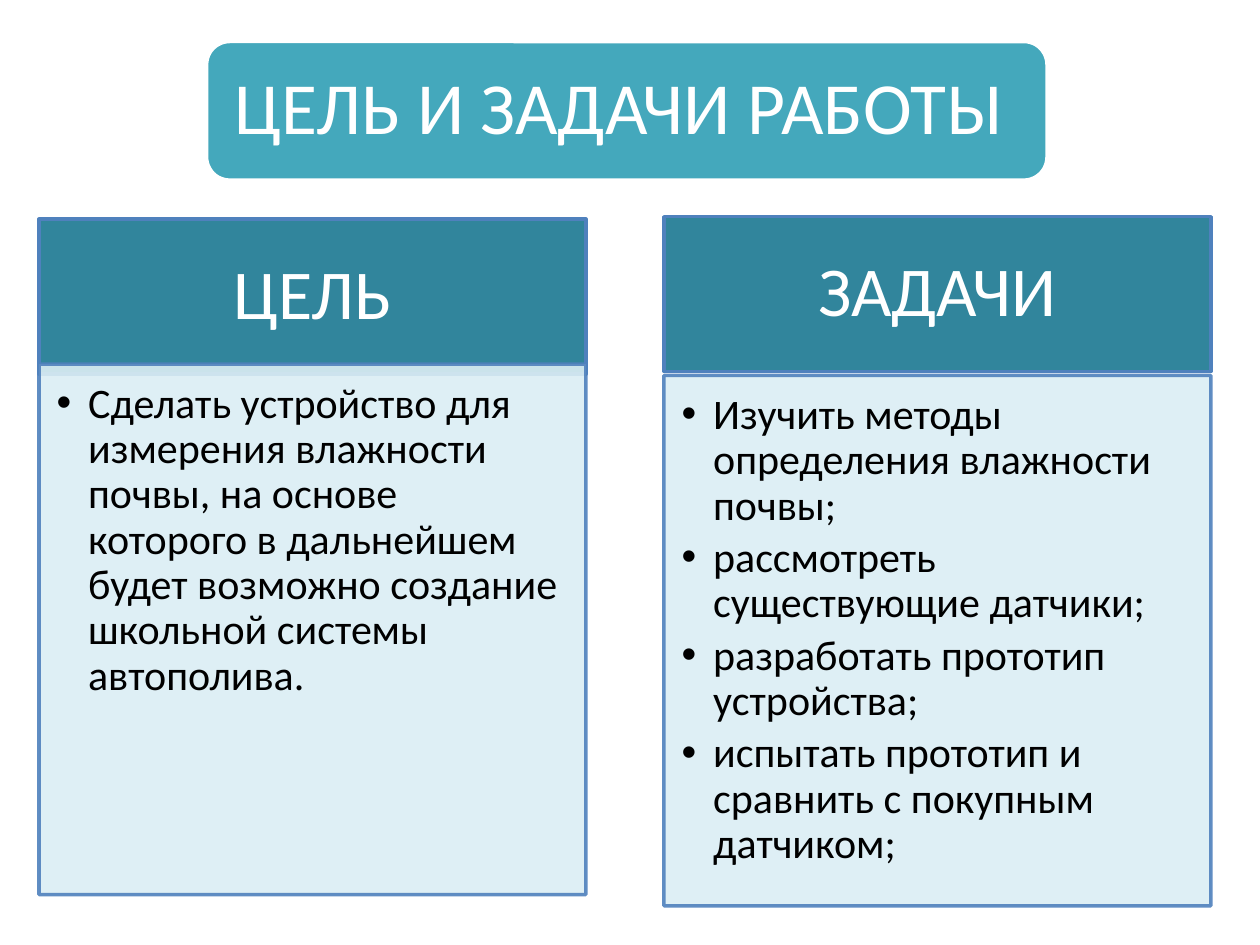
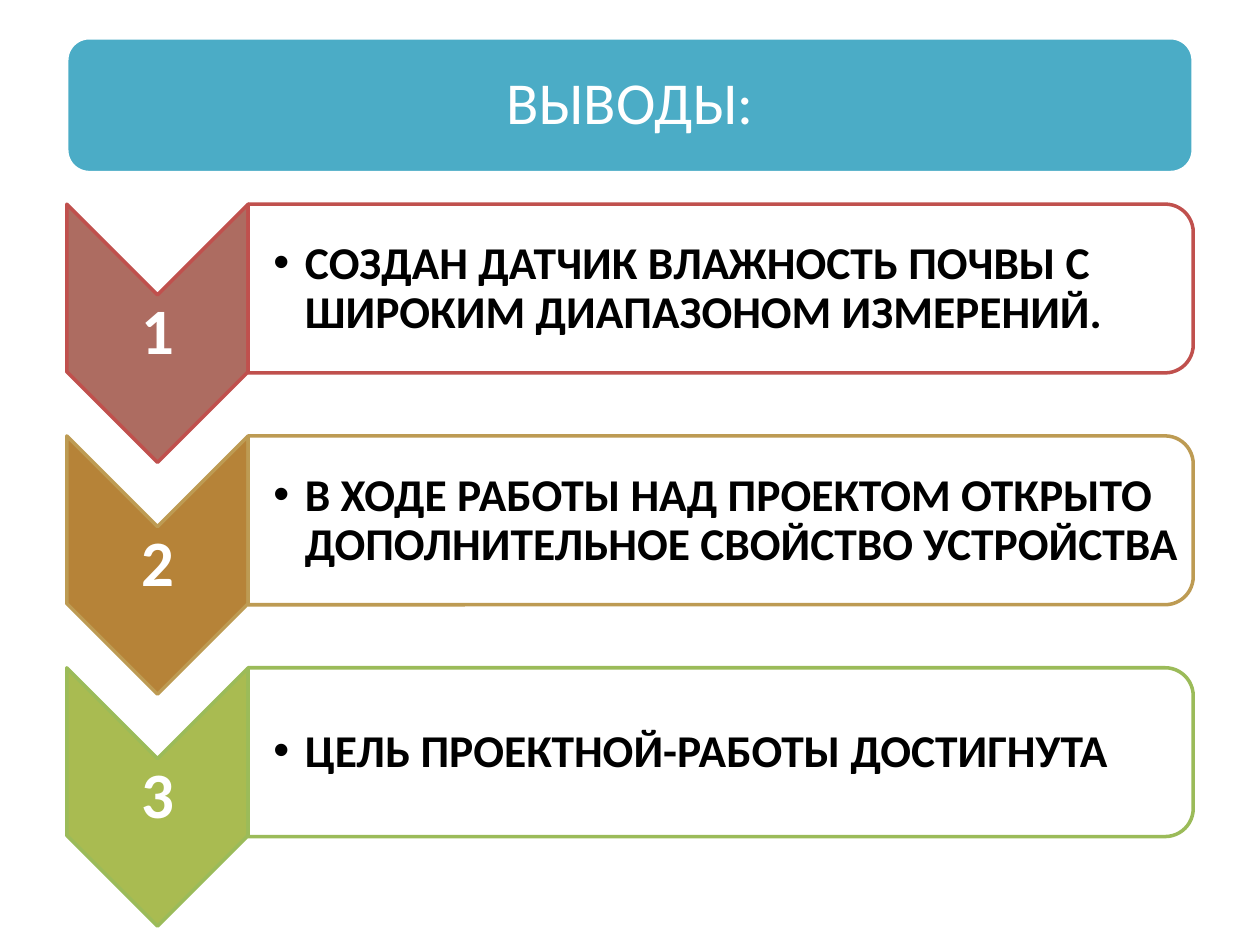
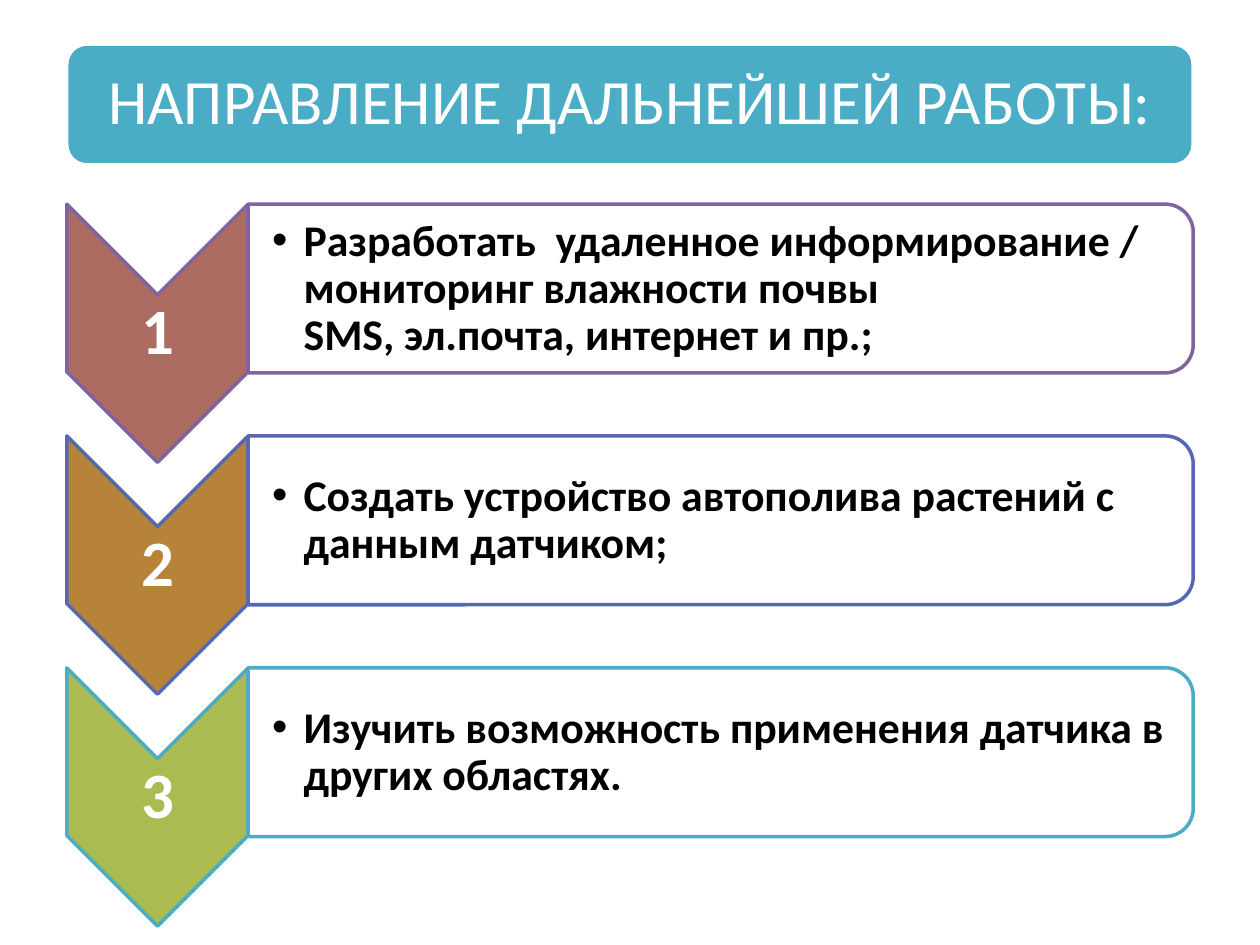
from lxml import etree
from pptx import Presentation
from pptx.dml.color import RGBColor
from pptx.enum.shapes import MSO_SHAPE
from pptx.enum.text import MSO_ANCHOR, PP_ALIGN
from pptx.oxml.ns import qn
from pptx.util import Inches, Pt

RECTANGLE = MSO_SHAPE.RECTANGLE
ROUNDED = MSO_SHAPE.ROUNDED_RECTANGLE
CHEVRON = MSO_SHAPE.CHEVRON
ROUND_TOP = MSO_SHAPE.ROUND_2_SAME_RECTANGLE
TOP, MIDDLE = MSO_ANCHOR.TOP, MSO_ANCHOR.MIDDLE
LEFT, CENTER = PP_ALIGN.LEFT, PP_ALIGN.CENTER

WHITE = RGBColor(0xFF, 0xFF, 0xFF)
BLACK = RGBColor(0x00, 0x00, 0x00)
DARK_TEAL = RGBColor(0x31, 0x85, 0x9C)
PALE_TEAL = RGBColor(0xDB, 0xEE, 0xF4)
TEAL = RGBColor(0x44, 0xA8, 0xBC)
AQUA = RGBColor(0x4B, 0xAC, 0xC6)
BLUE = RGBColor(0x4F, 0x81, 0xBD)
RED = RGBColor(0xC0, 0x50, 0x4D)
SAND = RGBColor(0xBD, 0x9B, 0x53)
GREEN = RGBColor(0x9B, 0xBB, 0x59)
PURPLE = RGBColor(0x80, 0x64, 0xA2)
INDIGO = RGBColor(0x57, 0x67, 0xB4)
STEP_FILLS = [
    RGBColor(0xAD, 0x6C, 0x61),
    RGBColor(0xB6, 0x83, 0x38),
    RGBColor(0xA9, 0xBB, 0x51),
]

FONT = "Calibri"
LINE_WIDTH = Pt(2)
BULLET_INDENT = Inches(0.25)
OPACITY = 90

GOALS_TITLE = {
    "text": "ЦЕЛЬ И ЗАДАЧИ РАБОТЫ", "area": (1.64, 0.33, 6.67, 1.1),
    "fill": TEAL, "size": 42, "inset": 0.17, "align": LEFT,
}
# heading, left, heading top, body top, points
GOAL_COLUMNS = [
    ("ЦЕЛЬ", 0.31, 1.74, 2.89, [
        "Сделать устройство для измерения влажности почвы, на основе которого "
        "в дальнейшем будет возможно создание школьной системы автополива.",
    ]),
    ("ЗАДАЧИ", 5.27, 1.72, 2.98, [
        "Изучить методы определения влажности почвы;",
        "рассмотреть существующие датчики;",
        "разработать прототип устройства;",
        "испытать прототип и сравнить с покупным датчиком;",
    ]),
]
STEP_SLIDES = [
    {
        "title": {
            "text": "ВЫВОДЫ:", "area": (0.53, 0.3, 8.94, 1.07),
            "fill": AQUA, "size": 34, "inset": 0.14, "align": CENTER,
        },
        "size": 26, "inset": 0.2, "lines": [RED, SAND, GREEN],
        "steps": [
            "СОЗДАН ДАТЧИК ВЛАЖНОСТЬ ПОЧВЫ С ШИРОКИМ ДИАПАЗОНОМ ИЗМЕРЕНИЙ.",
            "В ХОДЕ РАБОТЫ НАД ПРОЕКТОМ ОТКРЫТО ДОПОЛНИТЕЛЬНОЕ СВОЙСТВО УСТРОЙСТВА",
            "ЦЕЛЬ ПРОЕКТНОЙ-РАБОТЫ ДОСТИГНУТА",
        ],
    },
    {
        "title": {
            "text": "НАПРАВЛЕНИЕ ДАЛЬНЕЙШЕЙ РАБОТЫ:", "area": (0.53, 0.35, 8.94, 0.96),
            "fill": AQUA, "size": 36, "inset": 0.15, "align": CENTER,
        },
        "size": 25, "inset": 0.19, "lines": [PURPLE, INDIGO, AQUA],
        "steps": [
            "Разработать  удаленное информирование / мониторинг влажности почвы\n"
            "SMS, эл.почта, интернет и пр.;",
            "Создать устройство автополива растений с данным датчиком;",
            "Изучить возможность применения датчика в других областях.",
        ],
    },
]

COLUMN_WIDTH, HEADING_HEIGHT, BODY_HEIGHT = 4.34, 1.23, 4.21
STEP_TOP, STEP_PITCH = 1.62, 1.84
CHEVRON_LEFT, CHEVRON_WIDTH, CHEVRON_HEIGHT = 0.53, 1.44, 2.05
BAR_LEFT, BAR_WIDTH, BAR_HEIGHT = 1.97, 7.5, 1.34


def add_box(slide, kind, area, fill, line):
    box = slide.shapes.add_shape(kind, *map(Inches, area))
    box.shadow.inherit = False
    box.fill.solid()
    box.fill.fore_color.rgb = fill
    box.line.color.rgb = line
    box.line.width = LINE_WIDTH
    return box


def add_turned_box(slide, kind, area, fill, line):
    """Add a box turned by 90 degrees that covers the given area once turned."""
    left, top, width, height = area
    shift = (width - height) / 2
    box = add_box(slide, kind, (left + shift, top - shift, height, width), fill, line)
    box.rotation = 90
    return box


def make_translucent(fill_parent):
    color = fill_parent.find(qn("a:solidFill")).find(qn("a:srgbClr"))
    etree.SubElement(color, qn("a:alpha"), val=str(OPACITY * 1000))


def add_bullet(para):
    properties = para._p.get_or_add_pPr()
    properties.set("marL", str(BULLET_INDENT))
    properties.set("indent", str(-BULLET_INDENT))
    etree.SubElement(properties, qn("a:buFont"), typeface="Arial")
    etree.SubElement(properties, qn("a:buChar"), char="•")


def write(box, texts, size, insets, color=WHITE, bold=False, align=CENTER,
          anchor=MIDDLE, bullets=False):
    frame = box.text_frame
    left, top, right, bottom = map(Inches, insets)
    frame_format = {
        "word_wrap": True, "vertical_anchor": anchor, "margin_left": left,
        "margin_top": top, "margin_right": right, "margin_bottom": bottom,
    }
    for name, value in frame_format.items():
        setattr(frame, name, value)
    font_format = {"name": FONT, "size": Pt(size), "bold": bold}
    for index, text in enumerate(texts):
        para = frame.add_paragraph() if index else frame.paragraphs[0]
        para.text = text
        para.alignment = align
        para.line_spacing = 0.9
        if bullets:
            para.space_after = Pt(round(size * 0.17))
            add_bullet(para)
        for span in para.runs:
            for name, value in font_format.items():
                setattr(span.font, name, value)
            span.font.color.rgb = color


def add_title(slide, title):
    box = add_box(slide, ROUNDED, title["area"], title["fill"], WHITE)
    write(box, [title["text"]], title["size"], [title["inset"]] * 4, align=title["align"])


def add_goal_column(slide, heading, left, heading_top, body_top, points):
    head = add_box(slide, RECTANGLE, (left, heading_top, COLUMN_WIDTH, HEADING_HEIGHT),
                   DARK_TEAL, BLUE)
    write(head, [heading], 40, (0.31, 0.18, 0.31, 0.18))
    body = add_box(slide, RECTANGLE, (left, body_top, COLUMN_WIDTH, BODY_HEIGHT),
                   PALE_TEAL, BLUE)
    properties = body._element.spPr
    make_translucent(properties)
    make_translucent(properties.find(qn("a:ln")))
    write(body, points, 24, (0.14, 0.14, 0.19, 0.21), color=BLACK, align=LEFT,
          anchor=TOP, bullets=True)


def add_step(slide, index, text, line, size, inset):
    top = STEP_TOP + index * STEP_PITCH
    add_turned_box(slide, CHEVRON, (CHEVRON_LEFT, top, CHEVRON_WIDTH, CHEVRON_HEIGHT),
                   STEP_FILLS[index], line)
    number = slide.shapes.add_textbox(
        *map(Inches, (CHEVRON_LEFT, top + CHEVRON_WIDTH / 2, CHEVRON_WIDTH, 0.62)))
    write(number, [str(index + 1)], 37, [0.03] * 4, bold=True)

    bar = add_turned_box(slide, ROUND_TOP, (BAR_LEFT, top, BAR_WIDTH, BAR_HEIGHT), WHITE, line)
    make_translucent(bar._element.spPr)
    label = slide.shapes.add_textbox(*map(Inches, (BAR_LEFT, top + 0.07, 7.44, 1.21)))
    write(label, [text], size, (inset, 0.02, 0.02, 0.02), color=BLACK, bold=True,
          align=LEFT, bullets=True)


def main():
    deck = Presentation()
    deck.slide_width, deck.slide_height = Inches(10), Inches(7.5)
    blank = deck.slide_layouts[6]

    goals = deck.slides.add_slide(blank)
    for column in GOAL_COLUMNS:
        add_goal_column(goals, *column)
    add_title(goals, GOALS_TITLE)

    for page in STEP_SLIDES:
        slide = deck.slides.add_slide(blank)
        for index, (text, line) in enumerate(zip(page["steps"], page["lines"])):
            add_step(slide, index, text, line, page["size"], page["inset"])
        add_title(slide, page["title"])

    deck.save("out.pptx")


if __name__ == "__main__":
    main()
